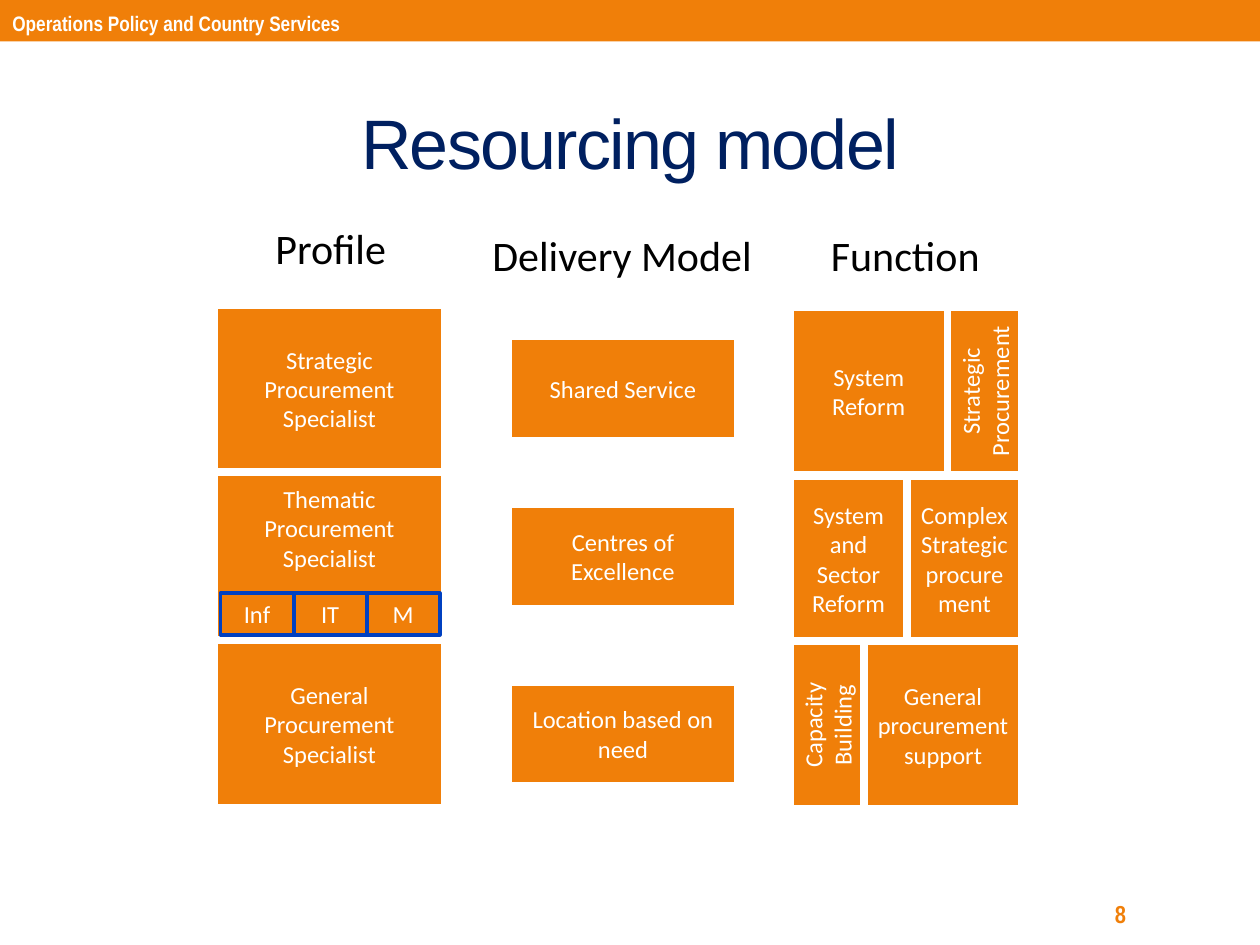
import dataclasses
import typing

import pptx
import pptx.dml.color
import pptx.enum.shapes
import pptx.enum.text
import pptx.util

Inches = pptx.util.Inches
Pt = pptx.util.Pt
ALIGN = pptx.enum.text.PP_ALIGN
ANCHOR = pptx.enum.text.MSO_ANCHOR

COLORS = {"orange": "F07F09", "white": "FFFFFF", "navy": "002060",
          "blue": "0040C0", "black": "000000"}


@dataclasses.dataclass
class Style:
    size: float
    face: str = "Calibri"
    color: str = "white"
    bold: bool = False
    align: typing.Any = ALIGN.CENTER
    anchor: typing.Any = ANCHOR.MIDDLE


@dataclasses.dataclass
class Box:
    text: str
    left: float
    top: float
    width: float
    height: float
    edge: str = "white"
    weight: float = 4.5
    turned: bool = False
    foot: float = 0.05


@dataclasses.dataclass
class Label:
    text: str
    left: float
    top: float
    width: float
    height: float
    style: Style


BODY = Style(14)
HEAD = Style(24, color="black", anchor=ANCHOR.TOP)
TITLE = Style(40, "Arial", "navy")
BANNER = Style(12, "Arial Narrow", bold=True, align=ALIGN.LEFT)
NUMBER = Style(14, "Arial Narrow", "orange", True, ALIGN.LEFT)


def color(name: str) -> pptx.dml.color.RGBColor:
    return pptx.dml.color.RGBColor.from_string(COLORS[name])


def write(shape, text: str, style: Style):
    frame = shape.text_frame
    frame.word_wrap = True
    frame.vertical_anchor = style.anchor
    part = frame.paragraphs[0]
    part.alignment = style.align
    run = part.add_run()
    run.text = text
    values = {"size": Pt(style.size), "name": style.face, "bold": style.bold}
    for key, value in values.items():
        setattr(run.font, key, value)
    run.font.color.rgb = color(style.color)
    return run


def draw_rect(slide, left: float, top: float, width: float, height: float):
    shape = slide.shapes.add_shape(
        pptx.enum.shapes.MSO_SHAPE.RECTANGLE,
        Inches(left), Inches(top), Inches(width), Inches(height))
    shape.shadow.inherit = False
    shape.fill.solid()
    shape.fill.fore_color.rgb = color("orange")
    shape.line.fill.background()
    return shape


def draw_box(slide, box: Box) -> None:
    shape = draw_rect(slide, box.left, box.top, box.width, box.height)
    shape.line.color.rgb = color(box.edge)
    shape.line.width = Pt(box.weight)
    write(shape, box.text, BODY)
    shape.text_frame.margin_bottom = Inches(box.foot)
    if box.turned:
        shape.text_frame._txBody.bodyPr.set("vert", "vert270")


def draw_label(slide, label: Label):
    shape = slide.shapes.add_textbox(
        Inches(label.left), Inches(label.top),
        Inches(label.width), Inches(label.height))
    return write(shape, label.text, label.style)


def main() -> None:
    deck = pptx.Presentation()
    deck.slide_width, deck.slide_height = Inches(10), Inches(7.5)
    slide = deck.slides.add_slide(deck.slide_layouts[6])

    # Banner, title and page number
    draw_rect(slide, 0, 0, 10, 0.33)
    title = draw_label(slide, Label("Resourcing model", 0.5, 0.58, 9, 1.08, TITLE))
    title._r.get_or_add_rPr().set("spc", "-100")
    draw_label(slide, Label("Operations Policy and Country Services",
                            0, 0.03, 4.5, 0.31, BANNER))
    draw_label(slide, Label("8", 8.75, 7.07, 1.17, 0.36, NUMBER))

    # Profile column, with room for the themes at the foot of the middle box
    step = 1.33
    profiles = [("Strategic", 0.05), ("Thematic", 0.5), ("General", 0.05)]
    for row, (kind, foot) in enumerate(profiles):
        draw_box(slide, Box(f"{kind} Procurement Specialist", 1.7,
                            2.42 + row * step, 1.83, step, foot=foot))
    for col, theme in enumerate(["Inf", "IT", "M"]):
        draw_box(slide, Box(theme, 1.75 + col * 0.58, 4.71, 0.58, 0.33,
                            edge="blue", weight=2.25))

    # Function column: each row is split in two at its own place
    left, right = 6.27, 8.11
    rows = [
        (2.44, 1.33, 7.52, "System Reform", "Strategic Procurement"),
        (3.78, 1.31, 7.2, "System and Sector Reform",
         "Complex Strategic procurement"),
        (5.09, 1.33, 6.86, "Capacity Building", "General procurement support"),
    ]
    for top, height, split, first, second in rows:
        for text, start, end in [(first, left, split), (second, split, right)]:
            width = end - start
            draw_box(slide, Box(text, start, top, width, height,
                                turned=width < 0.7))

    # Delivery model column
    models = [("Shared Service", 2.67), ("Centres of Excellence", 4),
              ("Location based on need", 5.41)]
    for text, top in models:
        draw_box(slide, Box(text, 4.03, top, 1.83, 0.83))

    # Column heads
    heads = [
        Label("Delivery Model", 3.81, 1.77, 2.3, 0.5,
              dataclasses.replace(HEAD, align=ALIGN.LEFT)),
        Label("Function", 6.23, 1.77, 1.91, 0.5, HEAD),
        Label("Profile", 1.67, 1.72, 1.91, 0.5, HEAD),
    ]
    for head in heads:
        draw_label(slide, head)

    deck.save("out.pptx")


if __name__ == "__main__":
    main()
